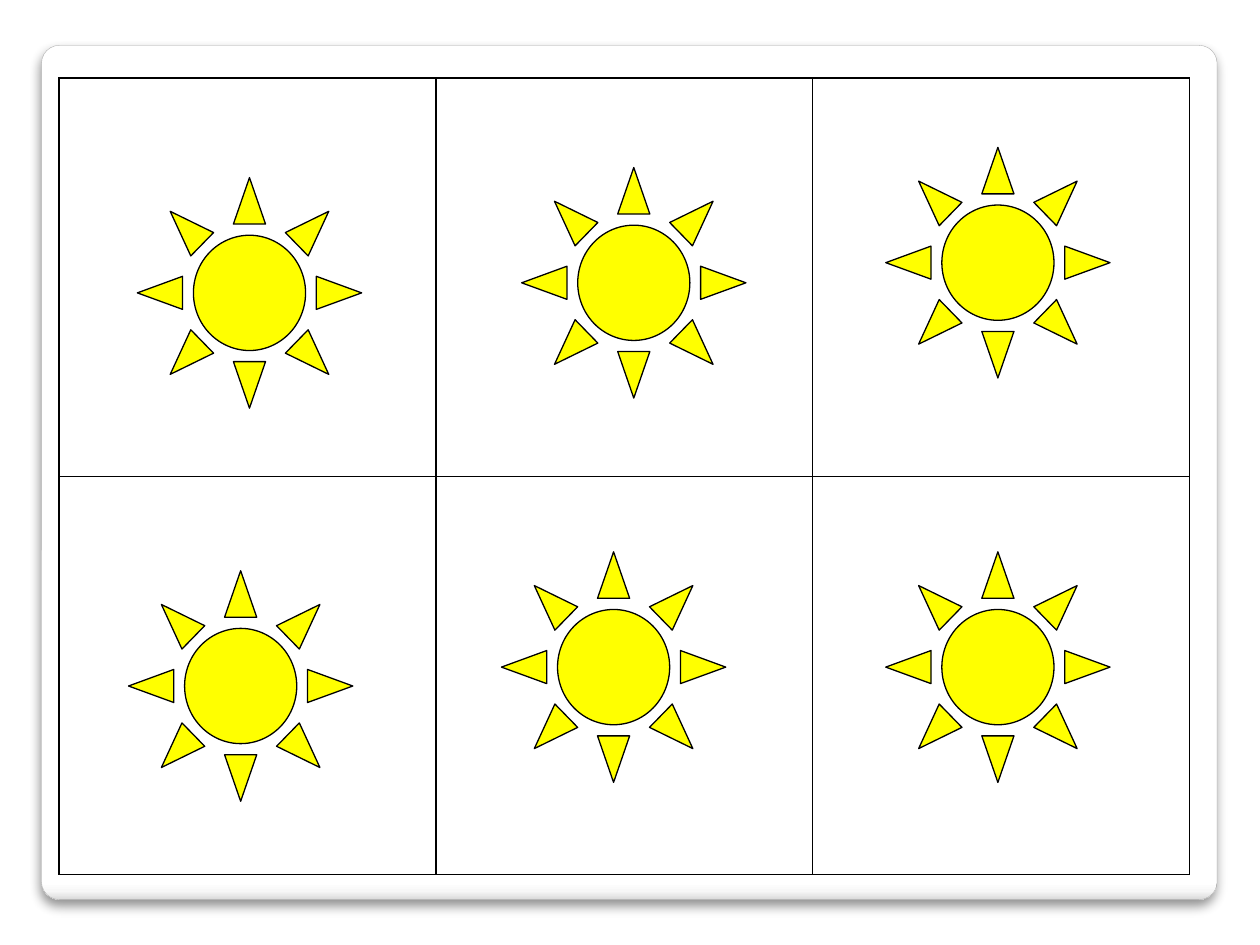
from dataclasses import dataclass

from lxml import etree
from pptx import Presentation
from pptx.dml.color import RGBColor
from pptx.enum.shapes import MSO_SHAPE
from pptx.oxml import parse_xml
from pptx.oxml.ns import nsdecls, qn
from pptx.util import Inches, Pt

ROUND_RECT = MSO_SHAPE.ROUNDED_RECTANGLE
SUN = MSO_SHAPE.SUN
BLANK_LAYOUT = 6


@dataclass(frozen=True)
class Theme:
    black: str = "000000"
    white: str = "FFFFFF"
    sun: str = "FFFF00"
    card_line: str = "A4A4A4"
    card_stops: tuple = ((0, "FFFFFF"), (98, "FFFFFF"), (99, "F7F7F7"), (100, "DADADA"))
    font: str = "Calibri"
    text_size: int = 18


THEME = Theme()
ROWS, COLS = 2, 3
COL_WIDTH, ROW_HEIGHT = 2.99, 3.16
SUN_SIZE = (1.78, 1.83)
SUN_POSITIONS = ((1.09, 1.41), (4.14, 1.33), (7.03, 1.17),
                 (1.02, 4.53), (3.98, 4.38), (7.03, 4.38))


def add_outlined_shape(slide, kind, box, adjustment, line_color, line_width):
    sp = slide.shapes.add_shape(kind, *map(Inches, box))
    sp.adjustments[0] = adjustment
    sp.shadow.inherit = False
    sp.line.color.rgb = RGBColor.from_string(line_color)
    sp.line.width = Pt(line_width)
    return sp


def add_card(slide):
    sp = add_outlined_shape(slide, ROUND_RECT, (0.33, 0.36, 9.33, 6.78), 0.021,
                            THEME.card_line, 0.16)
    # Vertical gradient that darkens only at the bottom edge
    sp.fill.gradient()
    sp.fill.gradient_angle = 270
    props = sp._element.spPr
    stops = props.find(".//" + qn("a:gsLst"))
    stops.clear()
    for position, color in THEME.card_stops:
        stop = etree.SubElement(stops, qn("a:gs"), pos=str(position * 1000))
        etree.SubElement(stop, qn("a:srgbClr"), val=color)
    # Soft shadow below the card
    effects = props.find(qn("a:effectLst"))
    effects.append(parse_xml(
        f'<a:outerShdw {nsdecls("a")} blurRad="{Pt(6)}" dist="{Pt(4)}" '
        f'dir="5400000" algn="t" rotWithShape="0"><a:srgbClr val="{THEME.black}">'
        '<a:alpha val="44000"/></a:srgbClr></a:outerShdw>'))


def set_borders(cell):
    props = cell._tc.get_or_add_tcPr()
    for index, side in enumerate(("lnL", "lnR", "lnT", "lnB")):
        props.insert(index, parse_xml(
            f'<a:{side} {nsdecls("a")} w="{Pt(1)}"><a:solidFill>'
            f'<a:srgbClr val="{THEME.black}"/></a:solidFill></a:{side}>'))


def add_grid(slide):
    table = slide.shapes.add_table(
        ROWS, COLS, Inches(0.47), Inches(0.62),
        Inches(COLS * COL_WIDTH), Inches(ROWS * ROW_HEIGHT)).table
    options = {"first_row": False, "horz_banding": False}
    for name, value in options.items():
        setattr(table, name, value)
    for column in table.columns:
        column.width = Inches(COL_WIDTH)
    for row in table.rows:
        row.height = Inches(ROW_HEIGHT)
    for cell in table.iter_cells():
        cell.fill.background()
        set_borders(cell)
        font = cell.text_frame.paragraphs[0].font
        for name, value in {"name": THEME.font, "size": Pt(THEME.text_size)}.items():
            setattr(font, name, value)


def add_sun(slide, position):
    sp = add_outlined_shape(slide, SUN, position + SUN_SIZE, 0.25, THEME.black, 0.75)
    sp.fill.solid()
    sp.fill.fore_color.rgb = RGBColor.from_string(THEME.sun)


def main():
    prs = Presentation()
    prs.slide_width, prs.slide_height = Inches(10), Inches(7.5)
    slide = prs.slides.add_slide(prs.slide_layouts[BLANK_LAYOUT])

    # Background and card
    background = slide.background.fill
    background.solid()
    background.fore_color.rgb = RGBColor.from_string(THEME.white)
    add_card(slide)

    # Grid with one sun in each cell
    add_grid(slide)
    for position in SUN_POSITIONS:
        add_sun(slide, position)

    prs.save("out.pptx")


if __name__ == "__main__":
    main()
